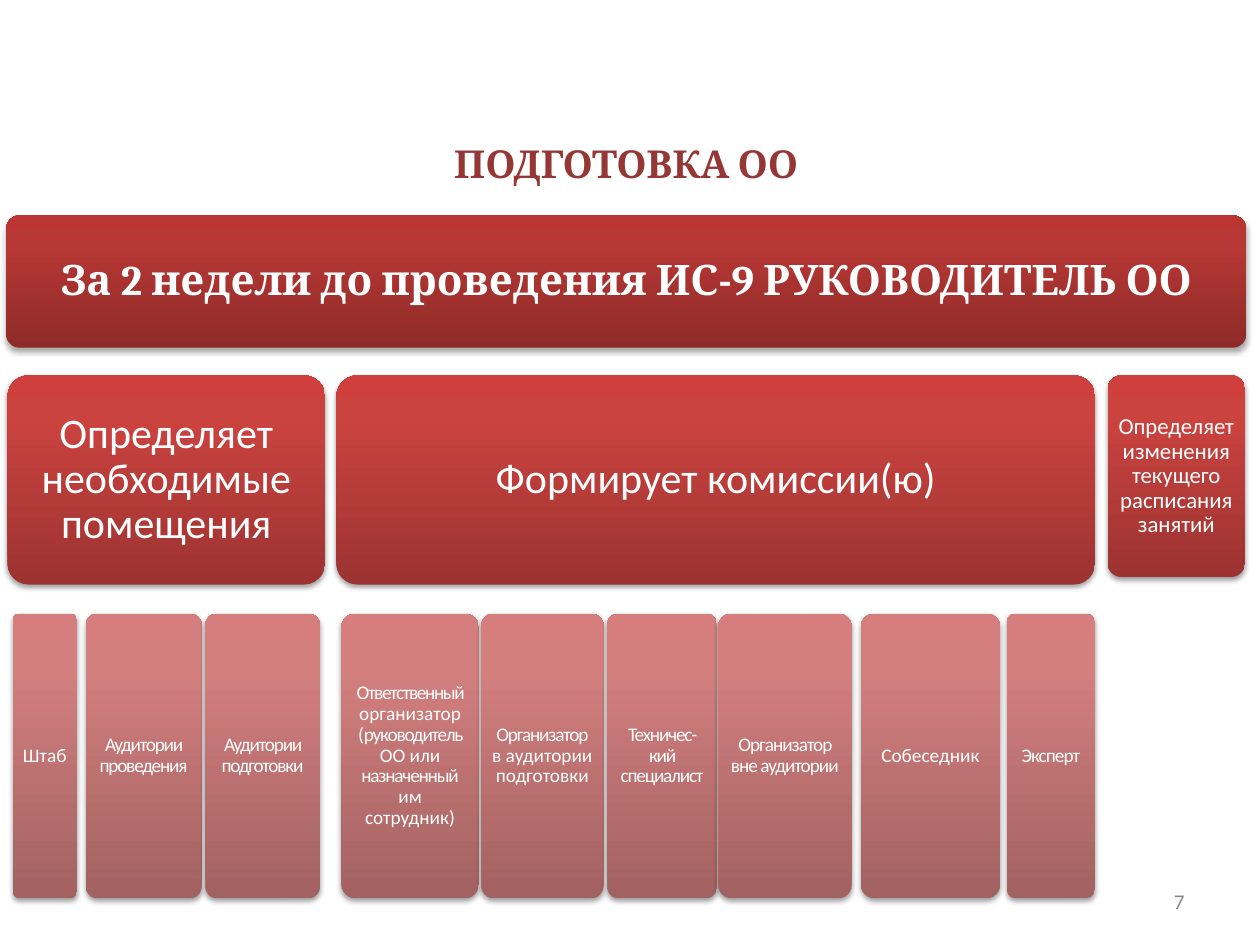
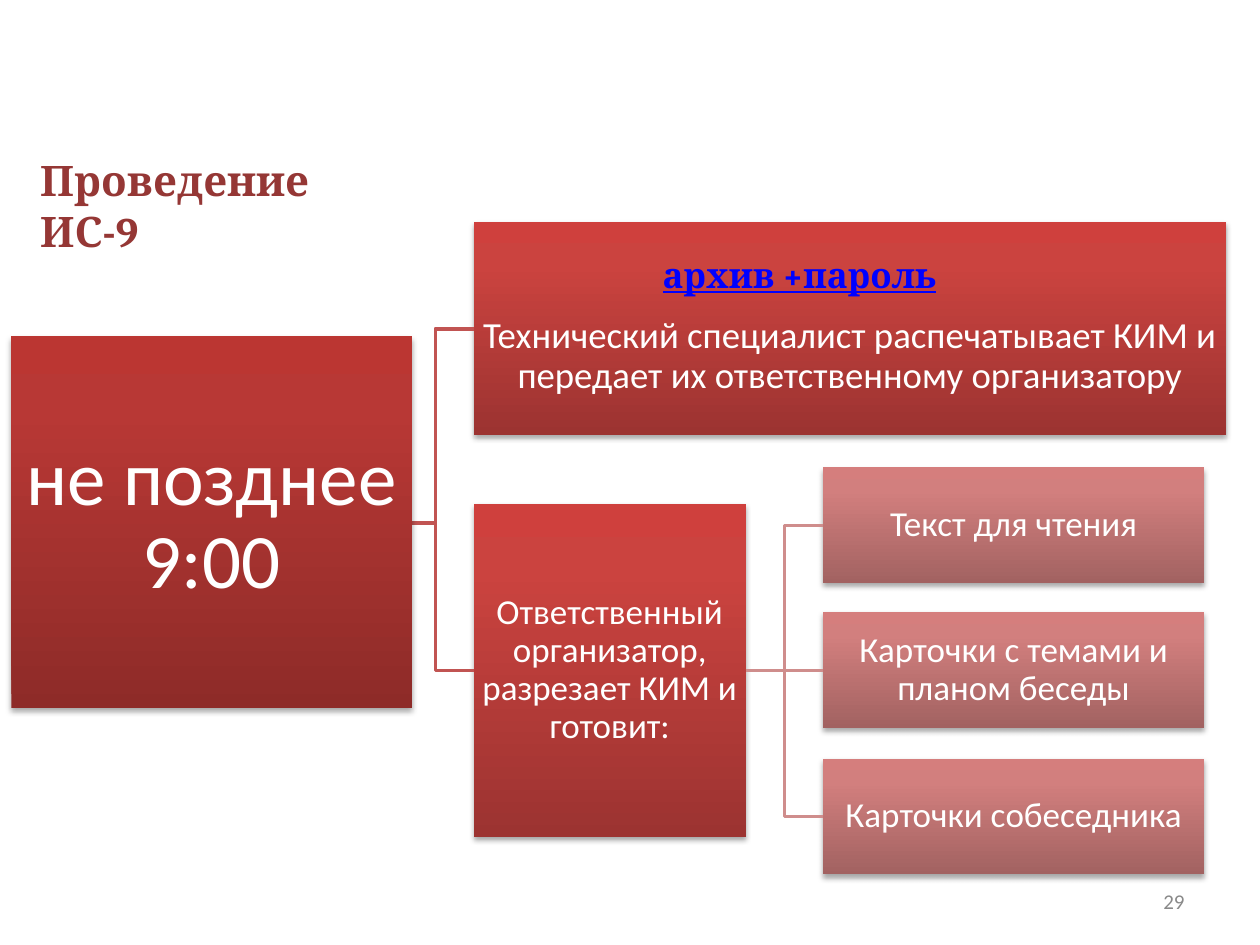
from pptx import Presentation
from pptx.dml.color import RGBColor
from pptx.enum.shapes import MSO_CONNECTOR, MSO_SHAPE
from pptx.enum.text import MSO_ANCHOR, PP_ALIGN
from pptx.oxml import parse_xml
from pptx.oxml.ns import nsdecls
from pptx.util import Pt

PX = 9144  # 100 px to the inch
RECT, ROUND = MSO_SHAPE.RECTANGLE, MSO_SHAPE.ROUNDED_RECTANGLE
ELBOW, STRAIGHT = MSO_CONNECTOR.ELBOW, MSO_CONNECTOR.STRAIGHT
LEFT, CENTER, RIGHT = PP_ALIGN.LEFT, PP_ALIGN.CENTER, PP_ALIGN.RIGHT
TOP, MIDDLE = MSO_ANCHOR.TOP, MSO_ANCHOR.MIDDLE
BODY, HEAD = "Calibri", "Cambria"

C = {"title": "953735", "number": "898989", "white": "FFFFFF", "link": "0000FF",
     "branch": "C15452", "twig": "CF8D8C"}
# Gradient stops at 0, 80 and 100 %, from bottom to top
GRADIENTS = {"dark": ("8E2B28", "B83835", "BB3632"),
             "red": ("9C3331", "CB433F", "CF403D"),
             "pale": ("A26261", "D27F7E", "D57E7D")}
DEEP, SOFT = (35, 23000), (38, 20000)  # shadow opacity and distance


def add_text(s, x, y, w, h, text, size, color, font=HEAD, align=LEFT, anchor=TOP, bold=True):
    tf = s.shapes.add_textbox(x * PX, y * PX, w * PX, h * PX).text_frame
    tf.word_wrap = True
    tf.vertical_anchor = anchor
    p = tf.paragraphs[0]
    p.text = text
    p.alignment = align
    p.font.name, p.font.size, p.font.bold = font, Pt(size), bold
    p.font.color.rgb = RGBColor.from_string(C[color])
    return p


def add_box(s, x, y, w, h, runs, size, tone, geometry, shadow, inset, font=BODY, bold=False):
    """Gradient box; runs is a list of (text, letter spacing in 1/100 pt)."""
    sp = s.shapes.add_shape(geometry, x * PX, y * PX, w * PX, h * PX)
    if geometry == ROUND:
        sp.adjustments[0] = 0.1
    sp.line.fill.background()
    stops = "".join(f'<a:gs pos="{pos}"><a:srgbClr val="{color}"/></a:gs>'
                    for pos, color in zip((0, 80000, 100000), GRADIENTS[tone]))
    spPr = sp._element.spPr
    spPr.ln.addprevious(parse_xml(
        f'<a:gradFill {nsdecls("a")} rotWithShape="1"><a:gsLst>{stops}</a:gsLst>'
        '<a:lin ang="16200000" scaled="0"/></a:gradFill>'))
    alpha, distance = shadow
    spPr.append(parse_xml(
        f'<a:effectLst {nsdecls("a")}><a:outerShdw blurRad="40000" dist="{distance}" '
        f'dir="5400000" rotWithShape="0"><a:srgbClr val="000000"><a:alpha val="{alpha}000"/>'
        '</a:srgbClr></a:outerShdw></a:effectLst>'))
    tf = sp.text_frame
    tf.word_wrap = True
    tf.vertical_anchor = MIDDLE
    tf.margin_left = tf.margin_right = tf.margin_top = tf.margin_bottom = inset * PX
    p = tf.paragraphs[0]
    p.alignment, p.line_spacing = CENTER, 0.9
    for text, spacing in runs:
        r = p.add_run()
        r.text = text
        if spacing:
            r.font._element.set("spc", str(spacing))
    p.font.name, p.font.size, p.font.bold = font, Pt(size), bold
    p.font.color.rgb = RGBColor.from_string(C["white"])
    return sp


prs = Presentation()
prs.slide_width, prs.slide_height = 1000 * PX, 750 * PX
slides = []
for number in ("7", "29"):
    s = prs.slides.add_slide(prs.slide_layouts[6])
    add_text(s, 717, 695, 233, 40, number, 12, "number", BODY, RIGHT, MIDDLE, False)
    slides.append(s)

# Slide 1: preparation hierarchy
s = slides[0]
add_text(s, 47, 102, 900, 55, "ПОДГОТОВКА ОО", 22, "title", align=CENTER, anchor=MIDDLE)
add_box(s, 5, 171, 984, 105, [("За 2 недели до проведения ИС-9 РУКОВОДИТЕЛЬ ОО", 0)],
        24, "dark", ROUND, DEEP, 10, HEAD, True)

# Tasks of the head
for x, w, h, text, size, inset in (
        (6, 252, 166, "Определяет необходимые помещения", 24, 10),
        (267, 602, 166, "Формирует комиссии(ю)", 24, 10),
        (879, 109, 160, "Определяет изменения текущего расписания занятий", 13, 5)):
    add_box(s, x, 298, w, h, [(text, 0)], size, "red", ROUND, SOFT, inset)

# Rooms and commission members
for x, w, runs in (
        (10, 51, [("Штаб", 0)]),
        (68, 92, [("Аудитории проведения", -70)]),
        (163, 91, [("Аудитории подготовки", -70)]),
        (271, 109, [("Ответственный ", -80), ("организатор (", 0), ("руководитель ", -70),
                    ("ОО или ", 0), ("назначенный", -70), (" им сотрудник)", 0)]),
        (382, 97, [("Организатор", -70), (" в аудитории подготовки", 0)]),
        (482, 87, [("Техничес-кий специалист", -70)]),
        (570, 106, [("Организатор вне аудитории", -60)]),
        (683, 111, [("Собеседник", 0)]),
        (799, 70, [("Эксперт", -60)])):
    add_box(s, x, 487, w, 226, runs, 11, "pale", ROUND, SOFT, 5)

# Slide 2: tree of actions on the day
s = slides[1]
printing = add_box(s, 376, 176, 597, 169,
                   [("Технический специалист распечатывает КИМ и передает их "
                     "ответственному организатору", 0)], 21, "red", RECT, DEEP, 1)
printing.text_frame.margin_top = 46 * PX  # room for the archive line
organizer = add_box(s, 376, 400, 216, 264,
                    [("Ответственный организатор, разрезает КИМ и готовит:", 0)],
                    20, "red", RECT, DEEP, 1)
materials = [add_box(s, 653, 371 + i * 231 // 2, 303, 92, [(text, 0)], 20, "pale", RECT, DEEP, 1)
             for i, text in enumerate(("Текст для чтения", "Карточки с темами и планом беседы",
                                       "Карточки собеседника"))]

# Connectors; the root box then covers the start of its branches
for kind, x1, y1, x2, y2, color in (
        (ELBOW, 315, 415, 376, 261, "branch"), (ELBOW, 315, 415, 376, 532, "branch"),
        (ELBOW, 592, 532, 653, 417, "twig"), (ELBOW, 592, 532, 653, 648, "twig"),
        (STRAIGHT, 592, 532, 653, 532, "twig")):
    cx = s.shapes.add_connector(kind, x1 * PX, y1 * PX, x2 * PX, y2 * PX)
    cx.line.width = Pt(2)
    cx.line.color.rgb = RGBColor.from_string(C[color])
    cx._element.spPr.append(parse_xml(f'<a:effectLst {nsdecls("a")}/>'))
    if kind == STRAIGHT:
        cx.begin_connect(organizer, 3)
        cx.end_connect(materials[1], 1)
add_box(s, 9, 267, 318, 295, [("не позднее 9:00", 0)], 44, "dark", RECT, DEEP, 3)

# Archive line and title
add_text(s, 516, 196, 339, 44, "архив +пароль", 20, "link").font.underline = True
add_text(s, 22, 118, 308, 50, "Проведение ИС-9", 24, "title")

prs.save("out.pptx")
